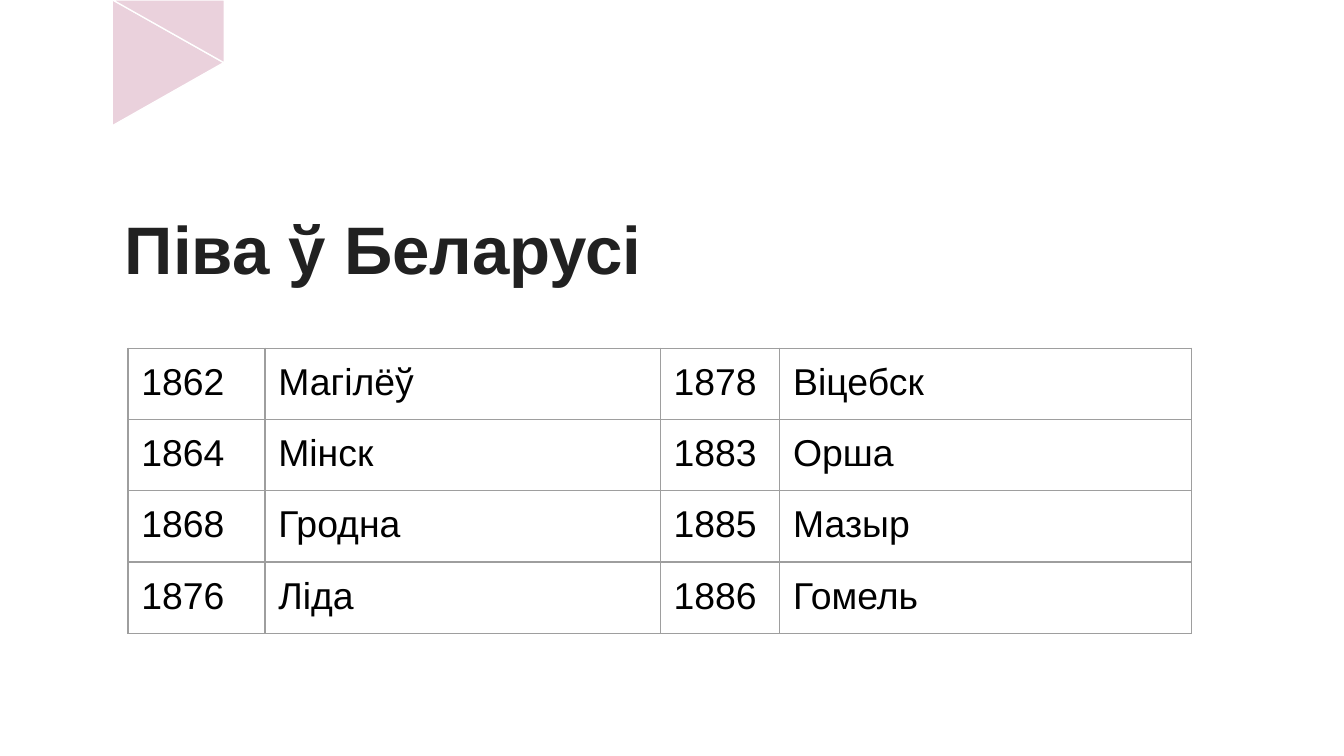
import pptx
import pptx.dml.color
import pptx.enum.shapes
import pptx.enum.text
import pptx.oxml
import pptx.oxml.ns
import pptx.util

Cm = pptx.util.Cm
Pt = pptx.util.Pt
SHAPES = pptx.enum.shapes.MSO_SHAPE


def color(hex_string):
    return pptx.dml.color.RGBColor.from_string(hex_string)


class SlideBuilder:
    """Holds the style and the slide being built."""

    font = "Arial"
    inset = Cm(0.25)
    line_width = Pt(0.75)
    pink = "EAD1DC"
    white = "FFFFFF"
    title_color = "212121"
    text_color = "000000"
    border_color = "9E9E9E"

    def __init__(self, presentation):
        self.slide = presentation.slides.add_slide(presentation.slide_layouts[6])

    def set_text(self, text_frame, text, size, hex_string, bold=False):
        text_frame.text = text
        font = text_frame.paragraphs[0].runs[0].font
        font.name = self.font
        font.size = Pt(size)
        font.bold = bold
        font.color.rgb = color(hex_string)

    def set_insets(self, holder):
        for side in ("left", "top", "right", "bottom"):
            setattr(holder, f"margin_{side}", self.inset)

    def add_triangle(self, kind, left, top, width, height, rotation):
        shape = self.slide.shapes.add_shape(
            kind, Cm(left), Cm(top), Cm(width), Cm(height))
        shape.rotation = rotation
        shape.shadow.inherit = False
        shape.fill.solid()
        shape.fill.fore_color.rgb = color(self.pink)
        shape.line.color.rgb = color(self.white)
        shape.line.width = self.line_width

    def add_title(self, text, left, top, width, height):
        shape = self.slide.shapes.add_textbox(
            Cm(left), Cm(top), Cm(width), Cm(height))
        text_frame = shape.text_frame
        text_frame.word_wrap = True
        text_frame.vertical_anchor = pptx.enum.text.MSO_ANCHOR.BOTTOM
        self.set_insets(text_frame)
        self.set_text(text_frame, text, 36, self.title_color, bold=True)

    def add_borders(self, cell):
        properties = cell._tc.get_or_add_tcPr()
        namespace = pptx.oxml.ns.nsdecls("a")
        for position, side in enumerate(("lnL", "lnR", "lnT", "lnB")):
            properties.insert(position, pptx.oxml.parse_xml(
                f'<a:{side} {namespace} w="{self.line_width}"><a:solidFill>'
                f'<a:srgbClr val="{self.border_color}"/>'
                f'</a:solidFill></a:{side}>'))

    def add_table(self, rows, left, top, column_widths, row_height):
        table = self.slide.shapes.add_table(
            len(rows), len(column_widths), Cm(left), Cm(top),
            Cm(sum(column_widths)), Cm(row_height * len(rows))).table
        table.first_row = False
        table.horz_banding = False
        for column, width in zip(table.columns, column_widths):
            column.width = Cm(width)
        for row, values in zip(table.rows, rows):
            row.height = Cm(row_height)
            for cell, value in zip(row.cells, values):
                self.set_insets(cell)
                self.set_text(cell.text_frame, value, 20, self.text_color)
                cell.fill.background()
                self.add_borders(cell)


def main():
    presentation = pptx.Presentation()
    presentation.slide_width = Cm(25.4)
    presentation.slide_height = Cm(14.29)
    builder = SlideBuilder(presentation)

    # Corner triangles
    builder.add_triangle(SHAPES.ISOSCELES_TRIANGLE, 1.98, 0.13, 2.39, 2.11, 90)
    builder.add_triangle(SHAPES.RIGHT_TRIANGLE, 2.13, 0, 2.11, 1.19, 180)

    # Title
    builder.add_title("Піва ў Беларусі", 2.11, 3.3, 21.16, 2.39)

    # Table of years and towns
    years_and_towns = [
        ("1862", "Магілёў", "1878", "Віцебск"),
        ("1864", "Мінск", "1883", "Орша"),
        ("1868", "Гродна", "1885", "Мазыр"),
        ("1876", "Ліда", "1886", "Гомель"),
    ]
    builder.add_table(years_and_towns, 2.42, 6.58, (2.59, 7.47, 2.26, 7.78), 1.07)

    presentation.save("out.pptx")


if __name__ == "__main__":
    main()
